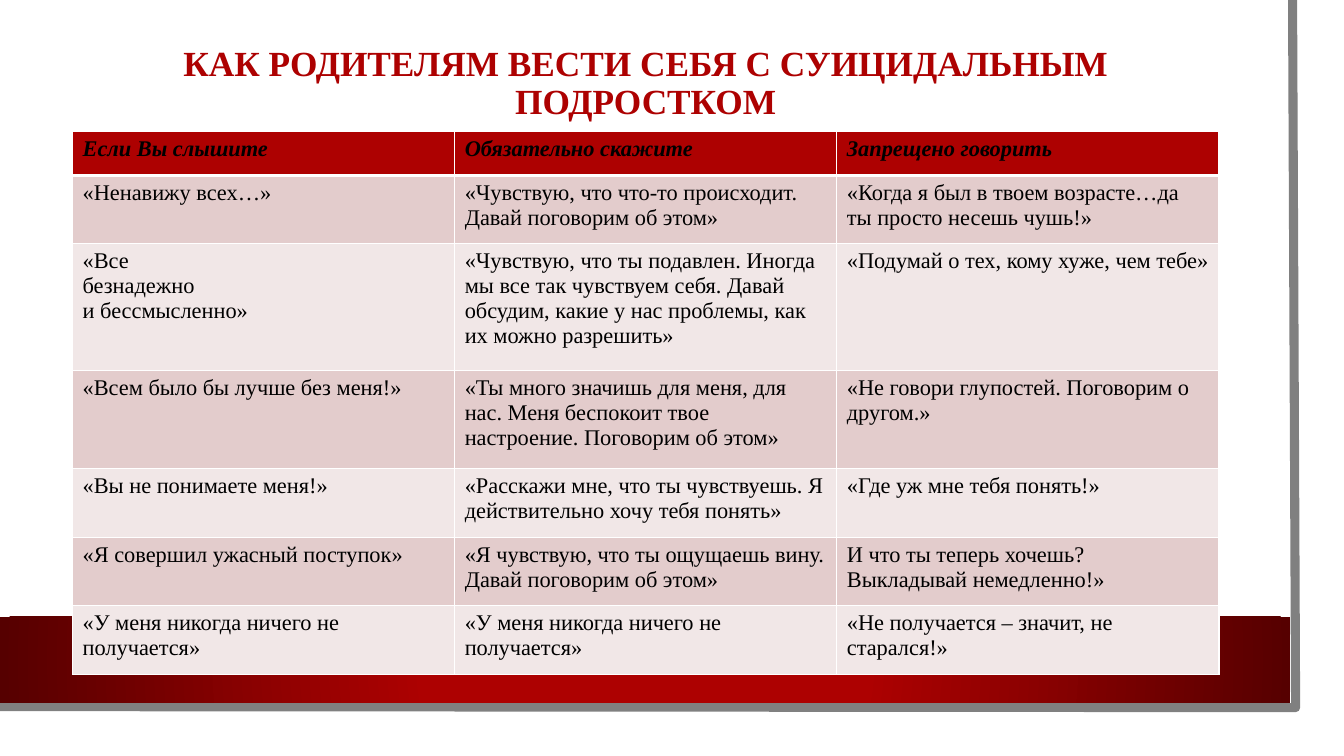
from lxml import etree
from pptx import Presentation
from pptx.dml.color import RGBColor
from pptx.enum.shapes import MSO_SHAPE
from pptx.enum.text import MSO_ANCHOR, MSO_AUTO_SIZE, PP_ALIGN
from pptx.oxml import parse_xml
from pptx.util import Inches, Pt

RECT = MSO_SHAPE.RECTANGLE
TOP = MSO_ANCHOR.TOP
NO_FIT = MSO_AUTO_SIZE.NONE
CENTER = PP_ALIGN.CENTER
TITLE_ONLY = 5
FONT = "Times New Roman"
NS = "http://schemas.openxmlformats.org/drawingml/2006/main"
COLORS = {
    "red": "AD0101",
    "dark_red": "560000",
    "gray": "808080",
    "white": "FFFFFF",
    "black": "000000",
    "odd": "E3CCCC",
    "even": "F1E7E7",
}
TITLE = "КАК РОДИТЕЛЯМ ВЕСТИ СЕБЯ С СУИЦИДАЛЬНЫМ ПОДРОСТКОМ"
ROW_HEIGHTS = [0.44, 0.68, 1.26, 0.97, 0.68, 0.68, 0.68]
ROWS = [
    ["Если Вы слышите", "Обязательно скажите", "Запрещено говорить"],
    ["«Ненавижу всех…»",
     "«Чувствую, что что-то происходит. Давай поговорим об этом»",
     "«Когда я был в твоем возрасте…да ты просто несешь чушь!»"],
    ["«Все\nбезнадежно\nи бессмысленно»",
     "«Чувствую, что ты подавлен. Иногда мы все так чувствуем себя. "
     "Давай обсудим, какие у нас проблемы, как их можно разрешить»",
     "«Подумай о тех, кому хуже, чем тебе»"],
    ["«Всем было бы лучше без меня!»",
     "«Ты много значишь для меня, для нас. Меня беспокоит твое настроение. "
     "Поговорим об этом»",
     "«Не говори глупостей. Поговорим о другом.»"],
    ["«Вы не понимаете меня!»",
     "«Расскажи мне, что ты чувствуешь. Я действительно хочу тебя понять»",
     "«Где уж мне тебя понять!»"],
    ["«Я совершил ужасный поступок»",
     "«Я чувствую, что ты ощущаешь вину. Давай поговорим об этом»",
     "И что ты теперь хочешь? Выкладывай немедленно!»"],
    ["«У меня никогда ничего не получается»",
     "«У меня никогда ничего не получается»",
     "«Не получается – значит, не старался!»"],
]


def rgb(name):
    return RGBColor.from_string(COLORS[name])


def add_run(p, text, size, color, bold=False, italic=False):
    r = p.add_run()
    r.text = text
    r.font.name = FONT
    r.font.size = Pt(size)
    r.font.bold = bold
    r.font.italic = italic
    r.font.color.rgb = rgb(color)


def add_frame(s):
    builder = s.shapes.build_freeform(Inches(12.82), Inches(0))
    corners = [(12.85, 7.02), (-0.03, 7.01)]
    builder.add_line_segments([(Inches(x), Inches(y)) for x, y in corners], close=False)
    sp = builder.convert_to_shape()
    sp.shadow.inherit = False
    sp.fill.background()
    sp.line.color.rgb = rgb("gray")
    sp.line.width = Pt(6.5)


def add_band(s):
    sp = s.shapes.add_shape(RECT, Inches(0), Inches(6.12), Inches(12.8), Inches(0.85))
    sp.shadow.inherit = False
    sp.line.fill.background()
    sp.fill.gradient()
    old = sp.element.spPr.find(f"{{{NS}}}gradFill")
    new = parse_xml(
        f'<a:gradFill xmlns:a="{NS}" rotWithShape="1"><a:gsLst>'
        f'<a:gs pos="34000"><a:srgbClr val="{COLORS["red"]}"/></a:gs>'
        f'<a:gs pos="100000"><a:srgbClr val="{COLORS["dark_red"]}"/></a:gs>'
        '</a:gsLst><a:path path="circle">'
        '<a:fillToRect l="50000" t="50000" r="50000" b="50000"/>'
        '</a:path></a:gradFill>')
    old.getparent().replace(old, new)


def set_title(s):
    sp = s.shapes.title
    sp.left, sp.top = Inches(0.72), Inches(0.41)
    sp.width, sp.height = Inches(11.37), Inches(1.24)
    tf = sp.text_frame
    tf.word_wrap = True
    tf.auto_size = NO_FIT
    tf.vertical_anchor = TOP
    p = tf.paragraphs[0]
    p.alignment = CENTER
    p.line_spacing = 0.9
    add_run(p, TITLE, 25.2, "red", bold=True)
    sp.element.getparent().append(sp.element)


def set_borders(cell, top, bottom):
    tc_pr = cell._tc.get_or_add_tcPr()
    widths = {"lnL": 1, "lnR": 1, "lnT": top, "lnB": bottom}
    for i, (side, width) in enumerate(widths.items()):
        ln = etree.Element(f"{{{NS}}}{side}", w=str(Pt(width)))
        fill = etree.SubElement(ln, f"{{{NS}}}solidFill")
        etree.SubElement(fill, f"{{{NS}}}srgbClr", val=COLORS["white"])
        tc_pr.insert(i, ln)


def fill_cell(cell, text, row):
    header = row == 0
    cell.fill.solid()
    cell.fill.fore_color.rgb = rgb("red" if header else "odd" if row % 2 else "even")
    set_borders(cell, 3 if row == 1 else 1, 3 if header else 1)
    tf = cell.text_frame
    for i, line in enumerate(text.split("\n")):
        p = tf.add_paragraph() if i else tf.paragraphs[0]
        add_run(p, line, 16, "black", bold=header, italic=header)


def add_phrases_table(s):
    table = s.shapes.add_table(len(ROWS), 3, Inches(0.72), Inches(1.3),
                               Inches(11.37), Inches(sum(ROW_HEIGHTS))).table
    for column in table.columns:
        column.width = Inches(3.79)
    for i, (height, texts) in enumerate(zip(ROW_HEIGHTS, ROWS)):
        table.rows[i].height = Inches(height)
        for j, text in enumerate(texts):
            fill_cell(table.cell(i, j), text, i)


def main():
    prs = Presentation()
    prs.slide_width, prs.slide_height = Inches(13.33), Inches(7.5)
    s = prs.slides.add_slide(prs.slide_layouts[TITLE_ONLY])
    add_frame(s)
    add_band(s)
    set_title(s)
    add_phrases_table(s)
    prs.save("out.pptx")


if __name__ == "__main__":
    main()
